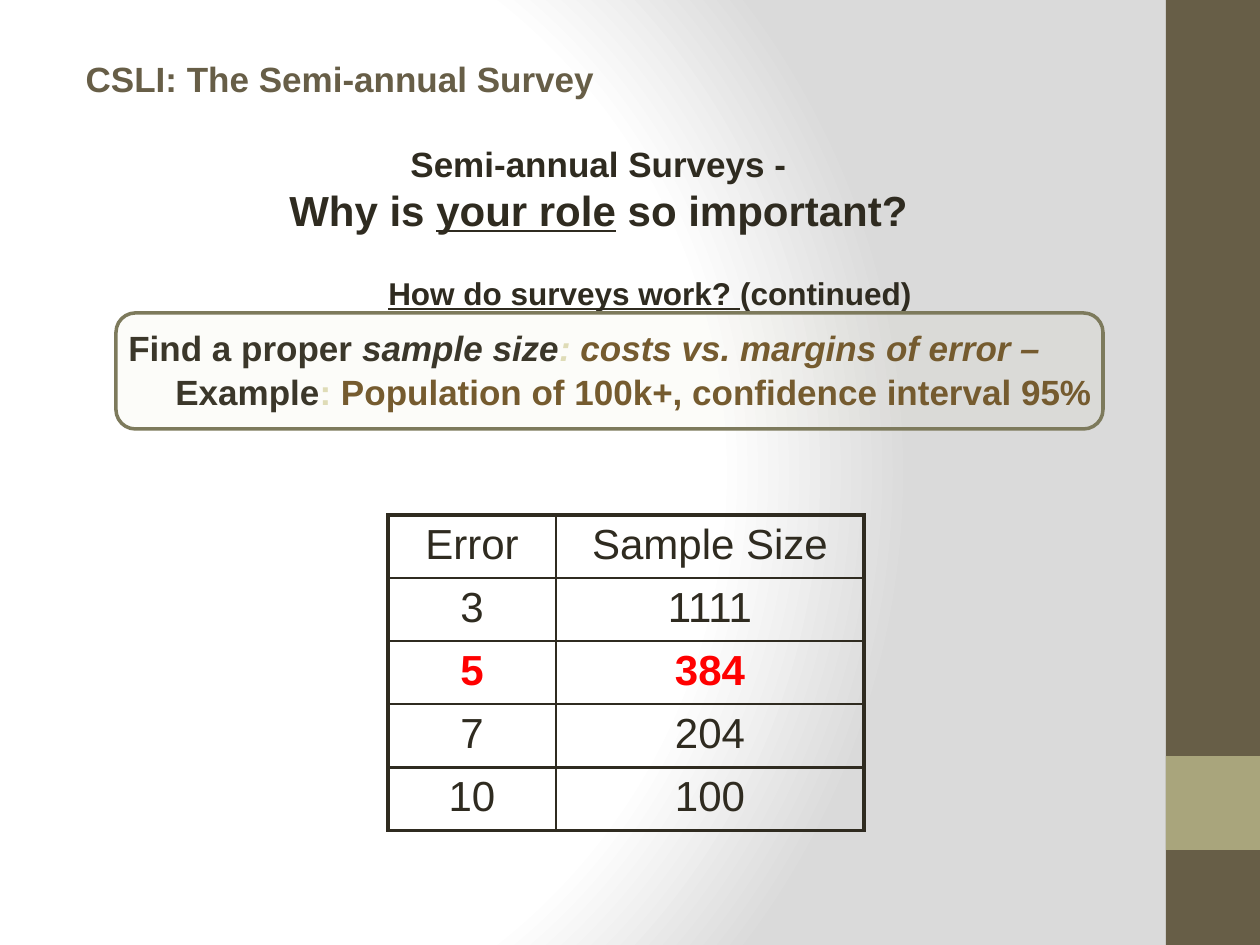
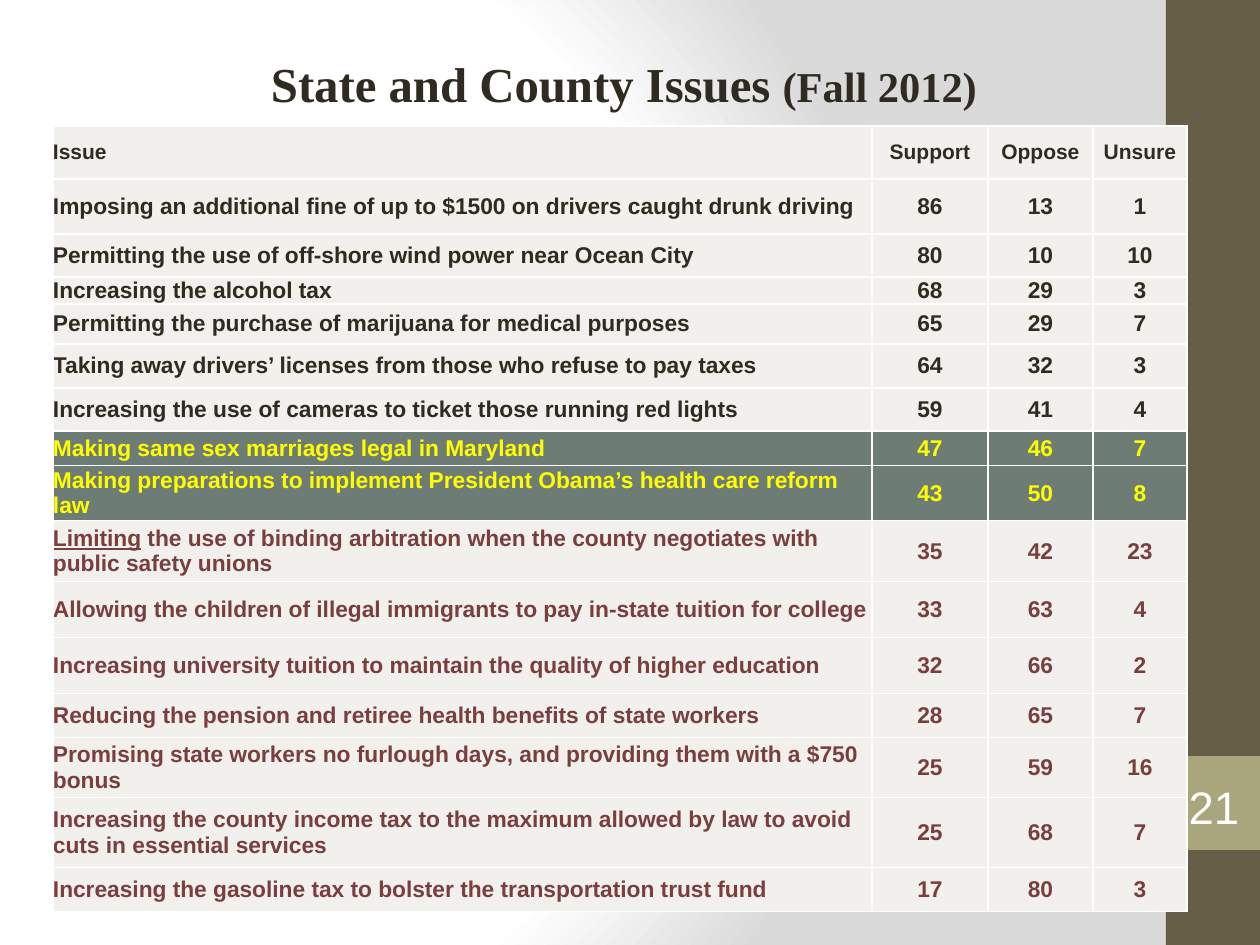
from lxml.etree import SubElement
from pptx import Presentation
from pptx.dml.color import RGBColor
from pptx.enum.shapes import MSO_SHAPE
from pptx.enum.text import MSO_ANCHOR, MSO_AUTO_SIZE, PP_ALIGN
from pptx.oxml import parse_xml
from pptx.oxml.ns import nsdecls, qn
from pptx.util import Emu, Pt

SCALE = 914400 / 126
SANS, SERIF = "Arial", "Times New Roman"
INK, BROWN, SAND, WHITE = "2F2B20", "675E47", "A9A57C", "FFFFFF"
CREAM, OLIVE, GOLD, RED = "DFDCB7", "7D7A5C", "6D5225", "FF0000"
PALE, SLATE, YELLOW, MAROON = "F1F0EC", "6D7D76", "FFFF00", "793F3F"
THIN, THICK = 1, 2.25
LEFT, MID = PP_ALIGN.LEFT, PP_ALIGN.CENTER

SAMPLES = [("Error", "Sample Size"), ("3", "1111"), ("5", "384"),
           ("7", "204"), ("10", "100")]

ISSUES = [
    (53, "Issue", "Support", "Oppose", "Unsure"),
    (55, "Imposing an additional fine of up to $1500 on drivers caught drunk driving", 86, 13, 1),
    (43, "Permitting the use of off-shore wind power near Ocean City", 80, 10, 10),
    (27, "Increasing the alcohol tax", 68, 29, 3),
    (40, "Permitting the purchase of marijuana for medical purposes", 65, 29, 7),
    (44, "Taking away drivers’ licenses from those who refuse to pay taxes", 64, 32, 3),
    (43, "Increasing the use of cameras to ticket those running red lights", 59, 41, 4),
    (35, "Making same sex marriages legal in Maryland", 47, 46, 7),
    (55, "Making preparations to implement President Obama’s health care reform law", 43, 50, 8),
    (61, "Limiting the use of binding arbitration when the county negotiates with "
         "public safety unions", 35, 42, 23),
    (56, "Allowing the children of illegal immigrants to pay in-state tuition for college",
     33, 63, 4),
    (56, "Increasing university tuition to maintain the quality of higher education", 32, 66, 2),
    (44, "Reducing the pension and retiree health benefits of state workers", 28, 65, 7),
    (60, "Promising state workers no furlough days, and providing them with a $750 bonus",
     25, 59, 16),
    (70, "Increasing the county income tax to the maximum allowed by law to avoid cuts in "
         "essential services", 25, 68, 7),
    (44, "Increasing the gasoline tax to bolster the transportation trust fund", 17, 80, 3),
]


def px(count):
    """Turn pixels into EMU."""
    return Emu(round(count * SCALE))


def tint(code):
    """Turn a hex string into a colour."""
    return RGBColor.from_string(code)


def style(font, size=None, color=None, bold=None, italic=None, under=None, name=None):
    """Set the given traits of a font."""
    if color:
        font.color.rgb = tint(color)
    if size:
        font.size = Pt(size)
    if name:
        font.name = name
    for trait, value in (("bold", bold), ("italic", italic), ("underline", under)):
        if value is not None:
            setattr(font, trait, value)


def write(para, runs, align=LEFT, name=SANS, **look):
    """Fill a paragraph with a string or with (text, traits) runs."""
    para.alignment = align
    style(para.font, name=name, **look)
    for text, traits in [(runs, {})] if isinstance(runs, str) else runs:
        run = para.add_run()
        run.text = text
        style(run.font, **traits)


def indent(para, **edges):
    """Set paragraph margins in pixels."""
    for key, value in edges.items():
        para._p.get_or_add_pPr().set(key, str(px(value)))


def place(shape, box):
    """Move a shape to a box."""
    shape.left, shape.top, shape.width, shape.height = map(px, box)


def block(slide, kind, box, fill=None, line=None, width=1):
    """Add a preset shape with an optional fill and line."""
    shape = slide.shapes.add_shape(kind, *map(px, box))
    shape.shadow.inherit = False
    if fill:
        shape.fill.solid()
        shape.fill.fore_color.rgb = tint(fill)
    else:
        shape.fill.background()
    if line:
        shape.line.color.rgb = tint(line)
        shape.line.width = Pt(width)
    else:
        shape.line.fill.background()
    return shape


def note(slide, box):
    """Add a wrapping text box and return its frame."""
    frame = slide.shapes.add_textbox(*map(px, box)).text_frame
    frame.word_wrap = True
    return frame


def title(slide, box, runs, anchor, **look):
    """Place and fill the title."""
    place(slide.shapes.title, box)
    frame = slide.shapes.title.text_frame
    frame.auto_size = MSO_AUTO_SIZE.NONE
    frame.vertical_anchor = anchor
    write(frame.paragraphs[0], runs, bold=True, **look)
    return frame.paragraphs[0]


def backdrop(master):
    """Give the master its round gradient."""
    master.background.fill.solid()
    fill = master.background._cSld.bg.bgPr
    stops = "".join(f'<a:gs pos="{pos}000"><a:srgbClr val="{code}"/></a:gs>'
                    for pos, code in ((0, WHITE), (75, WHITE), (100, "DADADA")))
    fill.replace(fill[0], parse_xml(
        f'<a:gradFill {nsdecls("a")} rotWithShape="1"><a:gsLst>{stops}</a:gsLst>'
        '<a:path path="circle"><a:fillToRect l="20000" t="50000" r="100000" b="50000"/>'
        '</a:path></a:gradFill>'))


def start(deck):
    """Add a title-only slide with the side band."""
    slide = deck.slides.add_slide(deck.slide_layouts[5])
    block(slide, MSO_SHAPE.RECTANGLE, (1166, 0, 94, 945), BROWN)
    block(slide, MSO_SHAPE.RECTANGLE, (1166, 756, 94, 94), SAND)
    return slide


def grid(slide, left, top, cols, rows):
    """Add a plain table with the given column widths and row heights."""
    frame = slide.shapes.add_table(len(rows), len(cols), px(left), px(top),
                                   px(sum(cols)), px(sum(rows)))
    table = frame.table
    table.first_row = table.horz_banding = False
    for part, sizes in ((table.columns, cols), (table.rows, rows)):
        for item, size in zip(part, sizes):
            if part is table.columns:
                item.width = px(size)
            else:
                item.height = px(size)
    return table


def border(cell, color, widths):
    """Draw the left, right, top and bottom edges of a cell."""
    props = cell._tc.get_or_add_tcPr()
    for spot, (side, width) in enumerate(zip("LRTB", widths)):
        line = SubElement(props, qn(f"a:ln{side}"), w=str(Pt(width)))
        SubElement(SubElement(line, qn("a:solidFill")), qn("a:srgbClr"), val=color)
        props.insert(spot, line)


def samples(slide, left, top):
    """Draw the table of errors and sample sizes."""
    table = grid(slide, left, top, (168, 308), [63] * len(SAMPLES))
    last = len(SAMPLES) - 1
    for r, row in enumerate(SAMPLES):
        for c, text in enumerate(row):
            cell = table.cell(r, c)
            cell.fill.background()
            key = row[0] == "5"
            write(cell.text_frame.paragraphs[0], text, MID, size=24,
                  color=RED if key else INK, bold=key)
            border(cell, INK, (THIN if c else THICK, THICK if c else THIN,
                               THICK if r in (0, last) else THIN,
                               THICK if r >= last - 1 else THIN))


def issues(slide, left, top):
    """Draw the table of issues and poll results."""
    table = grid(slide, left, top, (819, 116, 105, 94), [row[0] for row in ISSUES])
    for r, (_, *row) in enumerate(ISSUES):
        mark = r in (7, 8)
        color = YELLOW if mark else INK if r < 7 else MAROON
        for c, value in enumerate(row):
            cell = table.cell(r, c)
            cell.fill.solid()
            cell.fill.fore_color.rgb = tint(SLATE if mark else PALE)
            cell.vertical_anchor = MSO_ANCHOR.MIDDLE
            cell.margin_left = cell.margin_right = cell.margin_top = cell.margin_bottom = 0
            head, word, tail = str(value).partition("Limiting")
            runs = [(word, {"under": True}), (tail, {})] if word else head
            write(cell.text_frame.paragraphs[0], runs, MID if c else LEFT,
                  size=13 if r else 12, color=color, bold=True)
            border(cell, WHITE, [THIN] * 4)


def question(slide, box):
    """Write the two centred lines under the title."""
    frame = note(slide, box)
    first, second = frame.paragraphs[0], frame.add_paragraph()
    write(first, "Semi-annual Surveys -", MID, size=20, color=INK, bold=True)
    indent(first, marR=20)
    write(second, [("Why is ", {}), ("your role", {"under": True}), (" so important?", {})],
          MID, size=24, color=INK, bold=True)


def method(slide, box):
    """Write the heading and the framed advice on sample size."""
    left, top, width, _ = box
    frame = note(slide, box)
    frame.margin_top = 0
    head, body = frame.paragraphs[0], frame.add_paragraph()
    write(head, [("How do surveys work? ", {"under": True}), ("(continued)", {})],
          MID, size=18, color=INK, bold=True)
    indent(head, marL=47)
    head.space_after = Pt(7)
    write(body, [("Find a proper ", {}), ("sample size", {"italic": True}),
                 (": ", {"color": CREAM, "italic": True}),
                 ("costs vs. margins of error – ", {"color": GOLD, "italic": True}),
                 ("Example", {}), (": ", {"color": CREAM}),
                 ("Population of 100k+, confidence interval 95%", {"color": GOLD})],
          size=20, color=INK, bold=True)
    indent(body, marL=47, indent=-47)
    body.line_spacing = 1.05
    panel = block(slide, MSO_SHAPE.ROUNDED_RECTANGLE, (left, top + 39, width - 34, 116),
                  CREAM, OLIVE, 2)
    shade = panel.fill._xPr.find(qn("a:solidFill"))[0]
    SubElement(shade, qn("a:alpha"), val="7000")


def number(slide, box, text):
    """Write the slide number on the side band."""
    frame = block(slide, MSO_SHAPE.DOUBLE_BRACKET, box).text_frame
    frame.margin_left = frame.margin_right = frame.margin_top = frame.margin_bottom = 0
    frame.vertical_anchor = MSO_ANCHOR.MIDDLE
    write(frame.paragraphs[0], text, MID, size=26, color=WHITE)


def survey(deck):
    """Build the slide on sample size."""
    slide = start(deck)
    head = title(slide, (73, 53, 1134, 57), "CSLI: The Semi-annual Survey",
                 MSO_ANCHOR.MIDDLE, size=20, color=BROWN)
    head.line_spacing = 0.9
    question(slide, (262, 136, 693, 106))
    method(slide, (116, 274, 1021, 189))
    samples(slide, 388, 515)


def results(deck):
    """Build the slide of poll results."""
    slide = start(deck)
    title(slide, (57, 47, 1134, 63),
          [("State and County Issues ", {"size": 27.9}), ("(Fall 2012)", {"size": 24.3})],
          MSO_ANCHOR.TOP, align=MID, name=SERIF, color=INK)
    number(slide, (1176, 779, 76, 54), "21")
    issues(slide, 53, 126)


def main():
    """Build and save the deck."""
    deck = Presentation()
    deck.slide_width, deck.slide_height = px(1260), px(945)
    backdrop(deck.slide_master)
    survey(deck)
    results(deck)
    deck.save("out.pptx")


if __name__ == "__main__":
    main()
